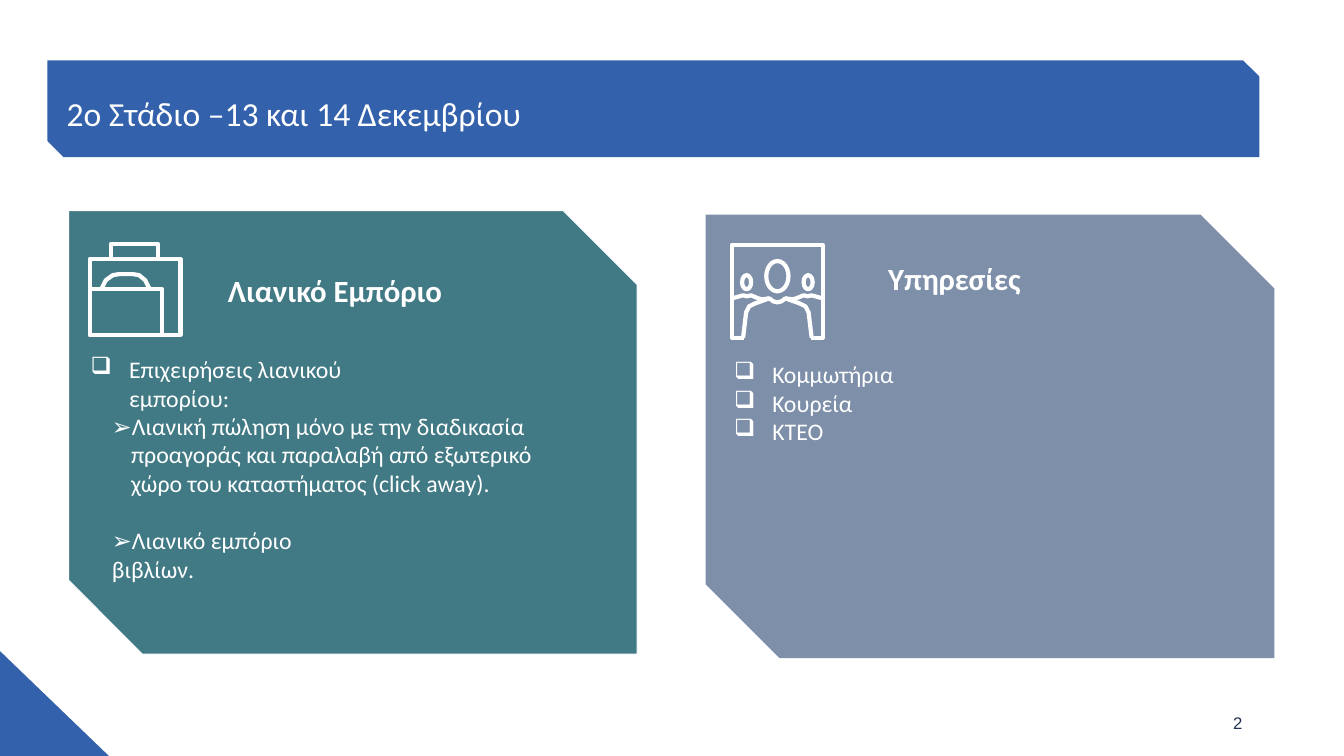
from dataclasses import dataclass

from lxml.etree import SubElement
from pptx import Presentation
from pptx.dml.color import RGBColor
from pptx.enum.shapes import MSO_SHAPE
from pptx.oxml.ns import qn
from pptx.util import Pt

PX = 9144  # EMU per px, 100 px to the inch


@dataclass(frozen=True)
class Theme:
    white: str = "FFFFFF"
    blue: str = "3461AB"
    teal: str = "417A85"
    slate: str = "7E8FA9"
    navy: str = "243355"
    font: str = "Calibri"
    symbol_font: str = "Arial"
    title: int = 24
    heading: int = 22
    body: int = 17
    number: int = 12
    icon_line: int = 3


THEME = Theme()
SLIDE = (1333, 750)
BULLET, ARROW = "❑", "➢"
BULLET_INDENT, ARROW_INDENT = (39, -38), (20, -19)

# preset, box (left, top, width, height), fill, outline width
PANELS = [
    (MSO_SHAPE.RIGHT_TRIANGLE, (0, 646, 108, 104), THEME.blue, 0),
    (MSO_SHAPE.SNIP_2_DIAG_RECTANGLE, (47, 60, 1202, 96), THEME.blue, 0),
    (MSO_SHAPE.SNIP_2_DIAG_RECTANGLE, (68, 209, 564, 440), THEME.teal, 0.75),
    (MSO_SHAPE.SNIP_2_DIAG_RECTANGLE, (700, 213, 564, 440), THEME.slate, 0),
]

TITLE = ((66, 92, 1202, 36), "2o Στάδιο –13 και 14 Δεκεμβρίου")
PAGE_NUMBER = ((1223, 707, 15, 20), "2")
HEADINGS = [
    ((226, 270, 240, 33), "Λιανικό Εμπόριο"),
    ((881, 258, 160, 33), "Υπηρεσίες"),
]
BULLET_LISTS = [
    ((89, 352, 330, 56), ["Επιχειρήσεις λιανικού εμπορίου:"]),
    ((727, 357, 161, 85), ["Κομμωτήρια", "Κουρεία", "ΚΤΕΟ"]),
]
ARROW_ITEMS = [
    ((110, 408, 460, 85), ARROW_INDENT,
     "Λιανική πώληση μόνο με την διαδικασία προαγοράς και παραλαβή "
     "από εξωτερικό χώρο του καταστήματος (click away)."),
    ((111, 522, 240, 56), (0, 0), "Λιανικό εμπόριο βιβλίων."),
]

# Bag: body, top grip, front pocket, then the handle
BAG_BOXES = [(89, 257, 90, 75), (110, 242, 47, 15), (89, 287, 72, 45)]
BAG_HANDLE = [(101, 286), (105, 278), (112, 273), (118, 272), (132, 272),
              (138, 273), (144, 278), (148, 286)]

# People: left halves of the lines, mirrored about the middle
PEOPLE_MIDDLE = 771
HEADS = [(760, 259, 22, 30), (736, 273, 9, 14), (797, 273, 9, 14)]
FRAME_HALF = [(738, 335), (726, 335), (726, 243)]
BODY_HALF = [(737, 335), (740, 310), (743, 304), (749, 301), (763, 296),
             (767, 299), (771, 300)]
SHOULDER = [(726, 296), (730, 295), (737, 293), (741, 294), (745, 293),
            (752, 296), (756, 297), (763, 296)]


def rgb(value):
    return RGBColor.from_string(value)


def add_panel(s, preset, box, fill, outline):
    sp = s.shapes.add_shape(preset, *(v * PX for v in box))
    sp.shadow.inherit = False
    sp.fill.solid()
    sp.fill.fore_color.rgb = rgb(fill)
    if outline:
        sp.line.color.rgb = rgb(THEME.white)
        sp.line.width = Pt(outline)
    else:
        sp.line.fill.background()


def style_as_icon_line(sp):
    sp.shadow.inherit = False
    sp.fill.background()
    sp.line.color.rgb = rgb(THEME.white)
    sp.line.width = Pt(THEME.icon_line)


def add_icon_preset(s, preset, box):
    style_as_icon_line(s.shapes.add_shape(preset, *(v * PX for v in box)))


def add_icon_path(s, points):
    builder = s.shapes.build_freeform(*points[0], scale=PX)
    builder.add_line_segments(points[1:], close=False)
    style_as_icon_line(builder.convert_to_shape())


def mirrored(points):
    return [(2 * PEOPLE_MIDDLE - x, y) for x, y in reversed(points)]


def set_indent(p, left, first, bullet=None):
    """Indent a paragraph and, if asked, give it a white bullet."""
    pPr = p._p.get_or_add_pPr()
    pPr.set("marL", str(left * PX))
    pPr.set("indent", str(first * PX))
    if bullet:
        color = SubElement(pPr, qn("a:buClr"))
        SubElement(color, qn("a:srgbClr"), val=THEME.white)
        SubElement(pPr, qn("a:buChar"), char=bullet)


def style_run(r, size, color=THEME.white, font=THEME.font, bold=False):
    r.font.size = Pt(size)
    r.font.name = font
    r.font.bold = bold
    r.font.color.rgb = rgb(color)


def add_text_frame(s, box):
    tf = s.shapes.add_textbox(*(v * PX for v in box)).text_frame
    tf.word_wrap = True
    tf.margin_left = tf.margin_top = tf.margin_right = tf.margin_bottom = 0
    return tf


def add_text(s, box, text, size, **style):
    tf = add_text_frame(s, box)
    tf.text = text
    style_run(tf.paragraphs[0].runs[0], size, **style)


def add_bullet_list(s, box, items):
    tf = add_text_frame(s, box)
    tf.text = "\n".join(items)
    for p in tf.paragraphs:
        set_indent(p, *BULLET_INDENT, bullet=BULLET)
        style_run(p.runs[0], THEME.body)


def add_arrow_item(s, box, indent, text):
    p = add_text_frame(s, box).paragraphs[0]
    set_indent(p, *indent)
    for part, font in ((ARROW, THEME.symbol_font), (text, THEME.font)):
        r = p.add_run()
        r.text = part
        style_run(r, THEME.body, font=font)


def add_icons(s):
    for box in BAG_BOXES:
        add_icon_preset(s, MSO_SHAPE.RECTANGLE, box)
    for box in HEADS:
        add_icon_preset(s, MSO_SHAPE.OVAL, box)
    for points in (BAG_HANDLE,
                   FRAME_HALF + mirrored(FRAME_HALF),
                   BODY_HALF + mirrored(BODY_HALF)[1:],
                   SHOULDER, mirrored(SHOULDER)):
        add_icon_path(s, points)


def main():
    prs = Presentation()
    prs.slide_width, prs.slide_height = (v * PX for v in SLIDE)
    s = prs.slides.add_slide(prs.slide_layouts[6])
    for panel in PANELS:
        add_panel(s, *panel)
    add_text(s, *TITLE, THEME.title)
    for heading in HEADINGS:
        add_text(s, *heading, THEME.heading, bold=True)
    for bullet_list in BULLET_LISTS:
        add_bullet_list(s, *bullet_list)
    for item in ARROW_ITEMS:
        add_arrow_item(s, *item)
    add_icons(s)
    add_text(s, *PAGE_NUMBER, THEME.number, color=THEME.navy,
             font=THEME.symbol_font)
    prs.save("out.pptx")


if __name__ == "__main__":
    main()
